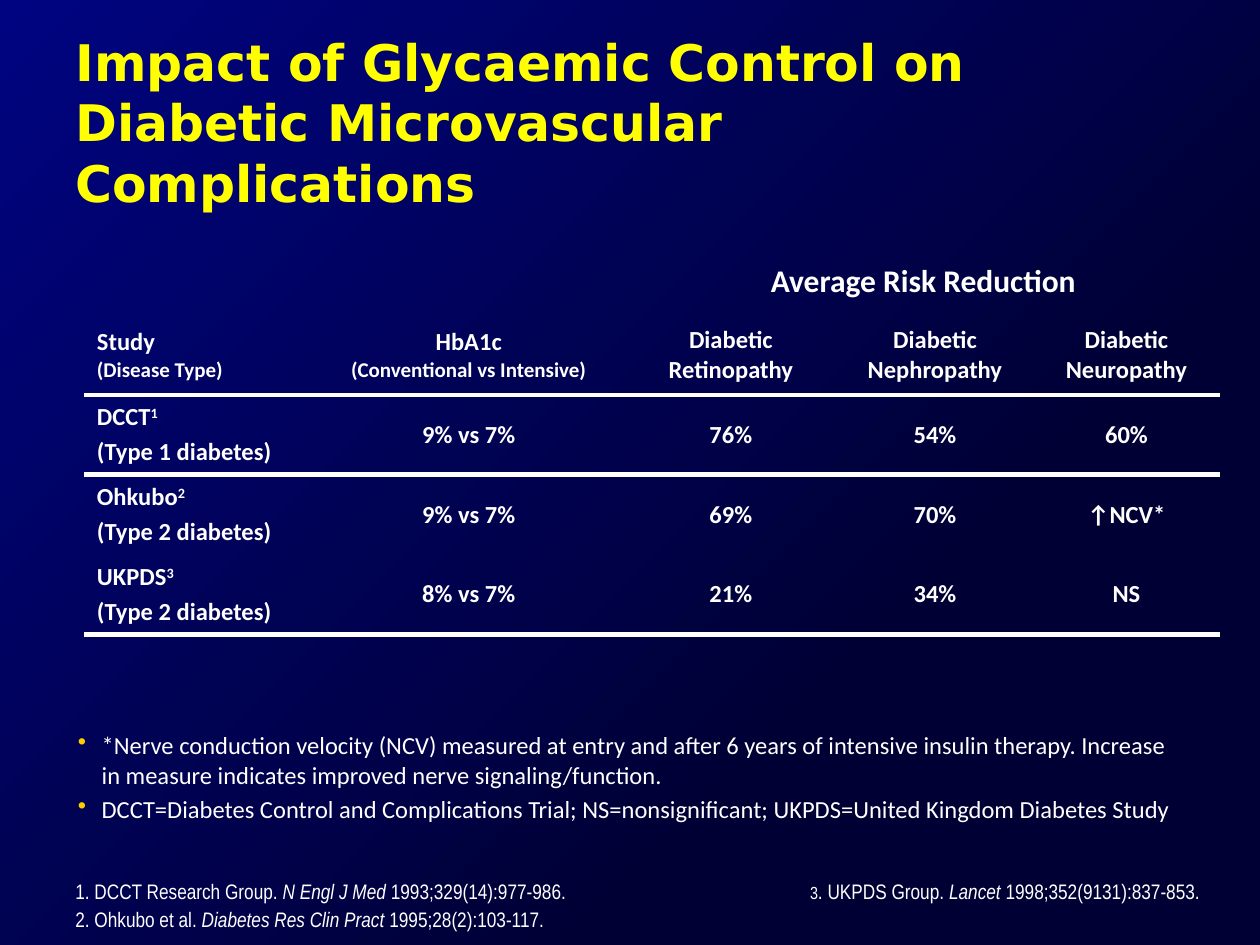
import pptx
import pptx.dml.color
import pptx.enum.shapes
import pptx.enum.text
import pptx.oxml
import pptx.oxml.ns
import pptx.util
from pptx.util import Cm, Pt

ALIGN = pptx.enum.text.PP_ALIGN
NS = pptx.oxml.ns.nsdecls("a")
WHITE = "FFFFFF"
GOLD = "FFCC00"
PLAIN = "{2D5ABB26-0587-4C30-8999-92F81FD0307C}"  # no style, no grid


def color(code):
    return pptx.dml.color.RGBColor.from_string(code)


def node(xml):
    """Parse one drawing element, adding its namespace."""
    tag, rest = xml.split(" ", 1)
    return pptx.oxml.parse_xml(f"{tag} {NS} {rest}")


class Deck:
    face = "Calibri"

    def __init__(self, wide, high):
        self.file = pptx.Presentation()
        self.file.slide_width, self.file.slide_height = Cm(wide), Cm(high)
        self.slide = self.file.slides.add_slide(self.file.slide_layouts[6])

    def ground(self, near, far):
        """Fill the slide with a glow that ends dark at the lower right."""
        rect = self.slide.shapes.add_shape(
            pptx.enum.shapes.MSO_SHAPE.RECTANGLE, 0, 0,
            self.file.slide_width, self.file.slide_height)
        rect.shadow.inherit = False
        rect.line.fill.background()
        grad = node(
            '<a:gradFill rotWithShape="0"><a:gsLst>'
            f'<a:gs pos="30000"><a:srgbClr val="{near}"/></a:gs>'
            f'<a:gs pos="100000"><a:srgbClr val="{far}"/></a:gs></a:gsLst>'
            '<a:path path="circle"><a:fillToRect l="100000" t="100000"/></a:path>'
            '</a:gradFill>')
        rect._element.spPr.find(pptx.oxml.ns.qn("a:prstGeom")).addnext(grad)

    def put(self, para, runs, size, face=None, bold=False, tint=WHITE, align=ALIGN.LEFT):
        """Fill a paragraph; a run is text or (text, mark), mark being i, sup or a size."""
        para.alignment = align
        font = para.font
        font.name, font.size, font.bold = face or self.face, Pt(size), bold
        font.color.rgb = color(tint)
        for item in [runs] if isinstance(runs, str) else runs:
            if item == "\n":
                para.add_line_break()
                continue
            text, mark = (item, None) if isinstance(item, str) else item
            run = para.add_run()
            run.text = text
            if mark == "i":
                run.font.italic = True
            elif mark == "sup":
                run.font._element.set("baseline", "30000")
            elif mark:
                run.font.size = Pt(mark)

    def fill(self, frame, lines, gap=0, bullet=None, **style):
        for i, runs in enumerate(lines):
            para = frame.add_paragraph() if i else frame.paragraphs[0]
            if i:
                para.space_before = Pt(gap)
            if bullet:
                props = para._p.get_or_add_pPr()
                props.set("marL", str(Cm(0.48)))
                props.set("indent", str(-Cm(0.48)))
                props.append(node(f'<a:buClr ><a:srgbClr val="{bullet}"/></a:buClr>'))
                props.append(node('<a:buChar char="•"/>'))
            self.put(para, runs, **style)

    def text(self, left, top, wide, high, lines, **style):
        box = self.slide.shapes.add_textbox(Cm(left), Cm(top), Cm(wide), Cm(high))
        box.text_frame.word_wrap = True
        self.fill(box.text_frame, lines, **style)

    def table(self, left, top, cols, high, rows, ruled):
        """Add a table with a thick line under each row listed in ruled."""
        grid = self.slide.shapes.add_table(
            len(rows), len(cols), Cm(left), Cm(top), Cm(sum(cols)), Cm(high * len(rows))).table
        grid.first_row = grid.horz_banding = False
        grid._tbl.tblPr.find(pptx.oxml.ns.qn("a:tableStyleId")).text = PLAIN
        for col, wide in zip(grid.columns, cols):
            col.width = Cm(wide)
        for r, row in enumerate(rows):
            grid.rows[r].height = Cm(high)
            for c, lines in enumerate(row):
                cell = grid.cell(r, c)
                cell.vertical_anchor = pptx.enum.text.MSO_ANCHOR.MIDDLE
                cell.fill.background()
                if r in ruled:
                    cell._tc.tcPr.insert(0, node(
                        f'<a:lnB w="{Pt(3)}"><a:solidFill><a:srgbClr val="{WHITE}"/>'
                        '</a:solidFill></a:lnB>'))
                self.fill(cell.text_frame, lines, gap=2.8, size=14, bold=True,
                          align=ALIGN.CENTER if c else ALIGN.LEFT)


def study(name, mark, kind, *values):
    return [[[name, (mark, "sup")], f"(Type {kind} diabetes)"], *([v] for v in values)]


def main():
    deck = Deck(25.4, 19.05)
    deck.ground("000035", "000480")
    deck.text(1.27, 0.5, 20.68, 3.18,
              ["Impact of Glycaemic Control on Diabetic Microvascular Complications"],
              size=28.8, face="DejaVu Sans", bold=True, tint="FFFF00")
    deck.text(12.67, 5.13, 11.89, 1.02, ["Average Risk Reduction"],
              size=18, bold=True, align=ALIGN.CENTER)

    head = [
        [[("Study", 14), "\n", ("(Disease Type)", 12)]],
        [[("HbA1c", 14), "\n", ("(Conventional vs Intensive)", 12)]],
        *([f"Diabetic {part}"] for part in ("Retinopathy", "Nephropathy", "Neuropathy")),
    ]
    rows = [
        head,
        study("DCCT", "1", 1, "9% vs 7%", "76%", "54%", "60%"),
        study("Ohkubo", "2", 2, "9% vs 7%", "69%", "70%", "↑NCV*"),
        study("UKPDS", "3", 2, "8% vs 7%", "21%", "34%", "NS"),
    ]
    deck.table(1.7, 6.35, [4.6, 6.3, 4.27, 3.96, 3.76], 1.61, rows, ruled=(0, 1, 3))

    cite = dict(size=12, face="Arial Narrow")
    deck.text(1.27, 17.58, 15.24, 1.27, [
        ["1. DCCT Research Group. ", ("N Engl J Med ", "i"), "1993;329(14):977-986."],
        ["2. Ohkubo et al. ", ("Diabetes Res Clin Pract", "i"), " 1995;28(2):103-117."],
    ], gap=1.8, **cite)
    deck.text(16.08, 17.58, 8.89, 0.76, [
        [("3", 10), ". UKPDS Group. ", ("Lancet ", "i"), "1998;352(9131):837-853."],
    ], **cite)
    deck.text(1.32, 14.6, 22.81, 1.07, [
        "*Nerve conduction velocity (NCV) measured at entry and after 6 years of intensive "
        "insulin therapy. Increase in measure indicates improved nerve signaling/function.",
        "DCCT=Diabetes Control and Complications Trial; NS=nonsignificant; "
        "UKPDS=United Kingdom Diabetes Study",
    ], gap=2.8, bullet=GOLD, size=14)
    deck.file.save("out.pptx")


if __name__ == "__main__":
    main()
